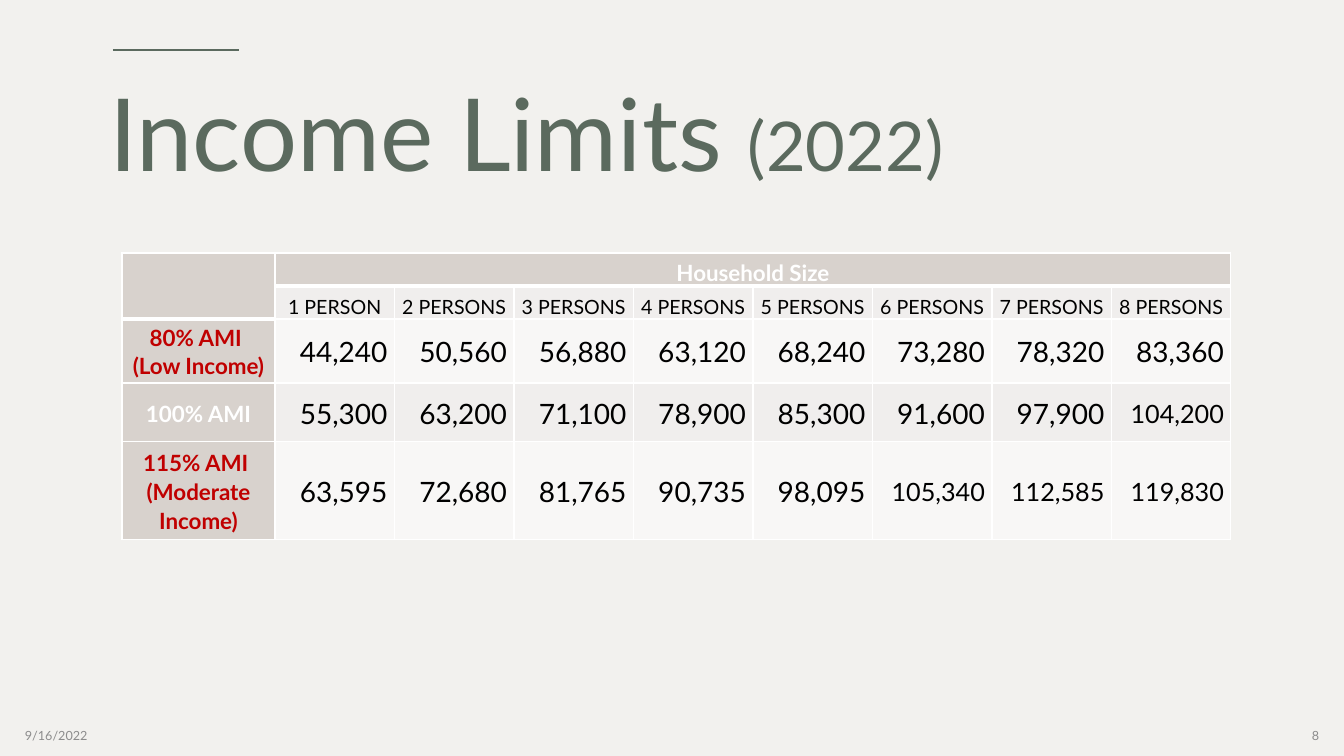
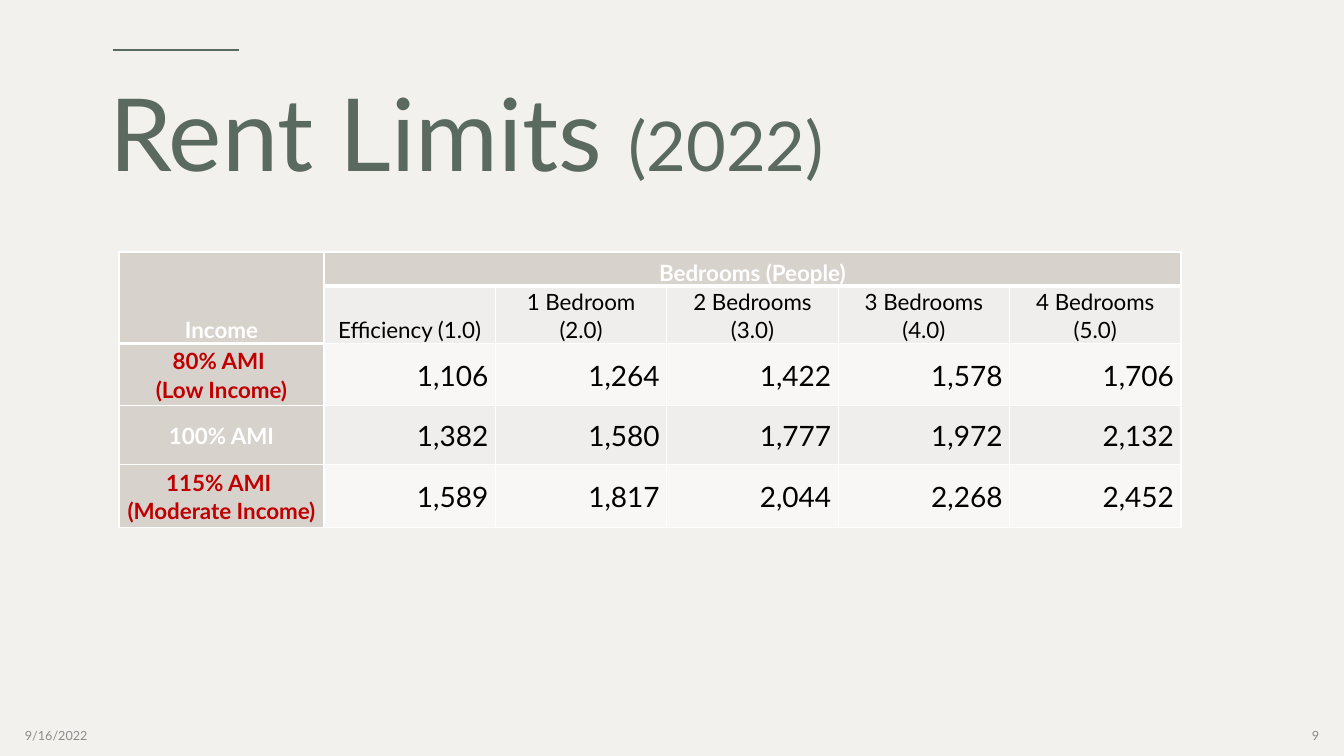
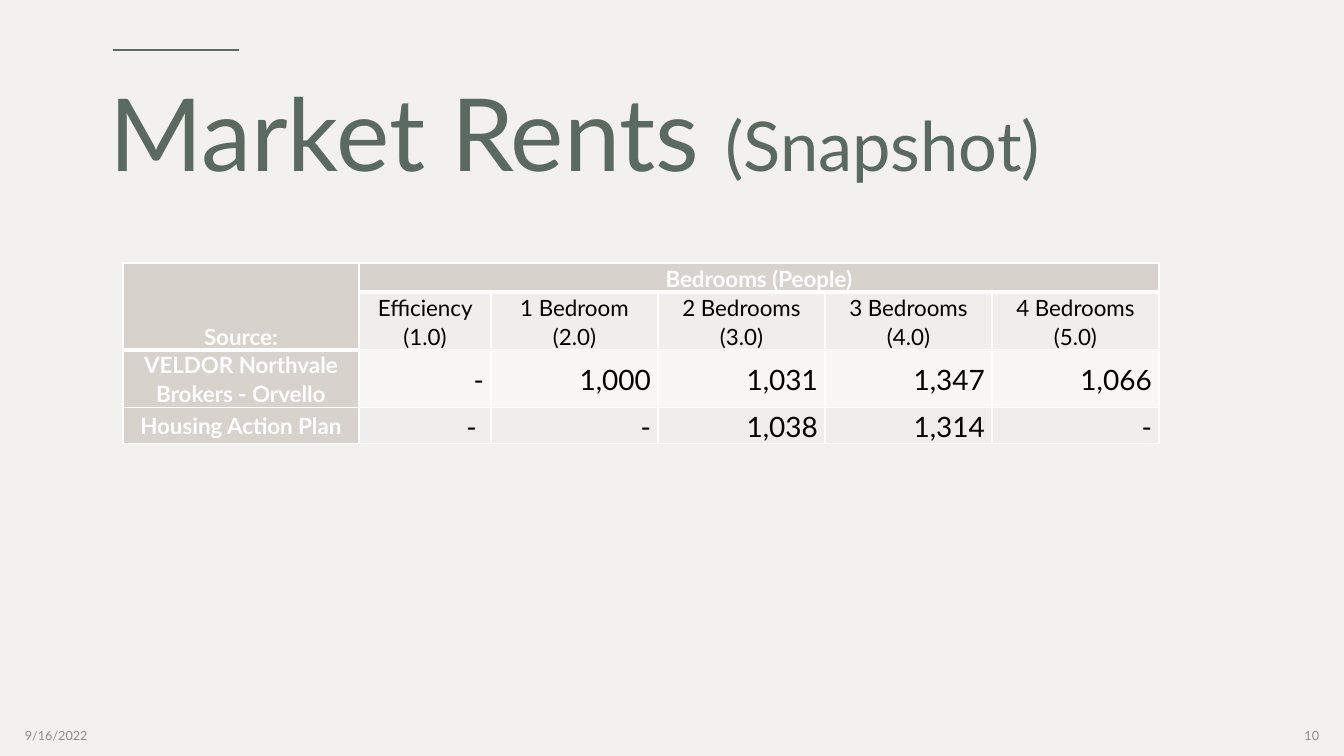
from lxml.etree import SubElement as Sub
from pptx import Presentation
from pptx.dml.color import RGBColor
from pptx.enum.shapes import MSO_CONNECTOR as Link
from pptx.enum.text import MSO_ANCHOR as Anchor, MSO_AUTO_SIZE as Fit, PP_ALIGN as Align
from pptx.oxml.ns import qn
from pptx.util import Emu, Pt

# Colours and type
PAPER = RGBColor(0xF2, 0xF1, 0xEE)
GREEN = RGBColor(0x5B, 0x6A, 0x5E)
GREY = RGBColor(0x8C, 0x8C, 0x8C)
STONE = RGBColor(0xD8, 0xD2, 0xCD)
BANDS = RGBColor(0xF8, 0xF7, 0xF6), RGBColor(0xF0, 0xEE, 0xED)
WHITE = RGBColor(0xFF, 0xFF, 0xFF)
BLACK = RGBColor(0, 0, 0)
RED = RGBColor(0xC0, 0, 0)
FONT = "Lato"

# Content: one dict a slide; the first row of a table holds the column heads
DATE = "9/16/2022"
FIRST = 8
LOW, MID, HIGH = "80% AMI \v(Low Income)", "100% AMI", "115% AMI \v(Moderate Income)"
BEDS = ("Efficiency (1.0)", "1 Bedroom (2.0)", "2 Bedrooms (3.0)",
        "3 Bedrooms (4.0)", "4 Bedrooms (5.0)")
PEOPLE = ("1 PERSON", *(f"{n} PERSONS" for n in range(2, 9)))

SLIDES = [
    dict(title=("Income Limits ", "(2022)"), corner="", top="Household Size",
         size=14, at=(122, 253), width=1109, lead=[153],
         heights=[33, 33, 64, 59, 98],
         rows=[("", *PEOPLE),
               (LOW, "44,240", "50,560", "56,880", "63,120",
                "68,240", "73,280", "78,320", "83,360"),
               (MID, "55,300", "63,200", "71,100", "78,900",
                "85,300", "91,600", "97,900", "104,200"),
               (HIGH, "63,595", "72,680", "81,765", "90,735",
                "98,095", "105,340", "112,585", "119,830")]),
    dict(title=("Rent Limits ", "(2022)"), corner="Income", top="Bedrooms (People)",
         size=16, at=(119, 252), width=1062, lead=[205],
         heights=[34, 57, 62, 59, 63],
         rows=[("", *BEDS),
               (LOW, "1,106", "1,264", "1,422", "1,578", "1,706"),
               (MID, "1,382", "1,580", "1,777", "1,972", "2,132"),
               (HIGH, "1,589", "1,817", "2,044", "2,268", "2,452")]),
    dict(title=("Market Rents ", "(Snapshot)"), corner="Source:", top="Bedrooms (People)",
         size=16, at=(123, 263), width=1036, lead=[236, 132],
         heights=[28, 58, 57, 36],
         rows=[("", *BEDS),
               ("VELDOR Northvale Brokers - Orvello", "-", "1,000", "1,031", "1,347", "1,066"),
               ("Housing Action Plan", "- ", "-", "1,038", "1,314", "-")]),
]


def px(n):
    return Emu(round(n * 914400 / 100.8))


def style(run, size, color, bold=False):
    look = dict(name=FONT, size=Pt(size), bold=bold)
    for key, value in look.items():
        setattr(run.font, key, value)
    run.font.color.rgb = color


def edge(cell, side, width):
    line = Sub(cell._tc.get_or_add_tcPr(), qn(f"a:ln{side}"), w=str(Pt(width)))
    Sub(Sub(line, qn("a:solidFill")), qn("a:srgbClr"), val=str(WHITE))


def write(cell, text, size, color, bold, align, anchor):
    look = dict(margin_left=px(7), margin_right=px(7), margin_top=0,
                margin_bottom=0, vertical_anchor=anchor)
    for key, value in look.items():
        setattr(cell, key, value)
    para = cell.text_frame.paragraphs[0]
    para.text = text
    para.alignment, para.line_spacing = align, 1.07
    for run in para.runs:
        style(run, size, color, bold)
    # Breaks and empty cells keep the same text size
    for gap in para._p.findall(qn("a:br")):
        Sub(gap, qn("a:rPr"), sz=str(size * 100))
    Sub(para._p, qn("a:endParaRPr"), sz=str(size * 100))


def thick(row, col):
    return row == 0 or (row == 1 and col == 0)


def add_grid(slide, data):
    rows = [(data["corner"], data["top"]), *data["rows"]]
    cols = len(rows[1])
    lead, heights = data["lead"], data["heights"]
    rest = cols - len(lead)
    widths = lead + [(data["width"] - sum(lead)) / rest] * rest
    box = (*data["at"], data["width"], sum(heights))
    table = slide.shapes.add_table(len(rows), cols, *map(px, box)).table
    table.first_row = table.horz_banding = False
    for col, width in zip(table.columns, widths):
        col.width = px(width)
    for row, height in zip(table.rows, heights):
        row.height = px(height)

    for r, row in enumerate(rows):
        for c in range(cols):
            cell = table.cell(r, c)
            text = row[c] if c < len(row) else ""
            head, value = r < 2, r > 1 and c > 0
            bold = r == 0 or c == 0
            color = RED if "Income)" in text else WHITE if bold else BLACK
            size = 16
            if value:
                size = 18 if len(text) > 6 else 20
            elif r == 1:
                size = data["size"]
            write(cell, text, size, color, bold,
                  Align.RIGHT if value else Align.CENTER,
                  Anchor.BOTTOM if head else Anchor.MIDDLE)
            edge(cell, "L", 1)
            edge(cell, "R", 1)
            edge(cell, "T", 3 if r and thick(r - 1, c) else 1)
            edge(cell, "B", 3 if thick(r, c) else 1)
            cell.fill.solid()
            cell.fill.fore_color.rgb = STONE if bold else BANDS[r % 2]
    table.cell(0, 0).merge(table.cell(1, 0))
    table.cell(0, 1).merge(table.cell(0, cols - 1))


def add_title(slide, parts):
    title = slide.shapes.title
    box = dict(left=99, top=59, width=1132, height=159)
    for key, value in box.items():
        setattr(title, key, px(value))
    frame = title.text_frame
    frame.auto_size, frame.word_wrap = Fit.NONE, True
    frame.vertical_anchor = Anchor.MIDDLE
    para = frame.paragraphs[0]
    para.alignment, para.line_spacing = Align.LEFT, 0.9
    for text, size in zip(parts, (72, 49)):
        run = para.add_run()
        run.text = text
        style(run, size, GREEN)


def add_frame(slide, number):
    # Rule above the title
    rule = slide.shapes.add_connector(Link.STRAIGHT, *map(px, (113, 50, 239, 50)))
    rule.line.color.rgb, rule.line.width = GREEN, Pt(1.25)
    Sub(rule._element.spPr, qn("a:effectLst"))
    # Footer
    for left, text, align in ((15, DATE, Align.LEFT), (1027, str(number), Align.RIGHT)):
        frame = slide.shapes.add_textbox(*map(px, (left, 715, 302, 40))).text_frame
        frame.word_wrap, frame.vertical_anchor = True, Anchor.MIDDLE
        para = frame.paragraphs[0]
        para.alignment = align
        run = para.add_run()
        run.text = text
        style(run, 9, GREY)


def main():
    deck = Presentation()
    deck.slide_width, deck.slide_height = px(1344), px(756)
    back = deck.slide_master.background.fill
    back.solid()
    back.fore_color.rgb = PAPER
    for number, data in enumerate(SLIDES, FIRST):
        slide = deck.slides.add_slide(deck.slide_layouts[5])
        add_frame(slide, number)
        add_title(slide, data["title"])
        add_grid(slide, data)
    deck.save("out.pptx")


if __name__ == "__main__":
    main()
